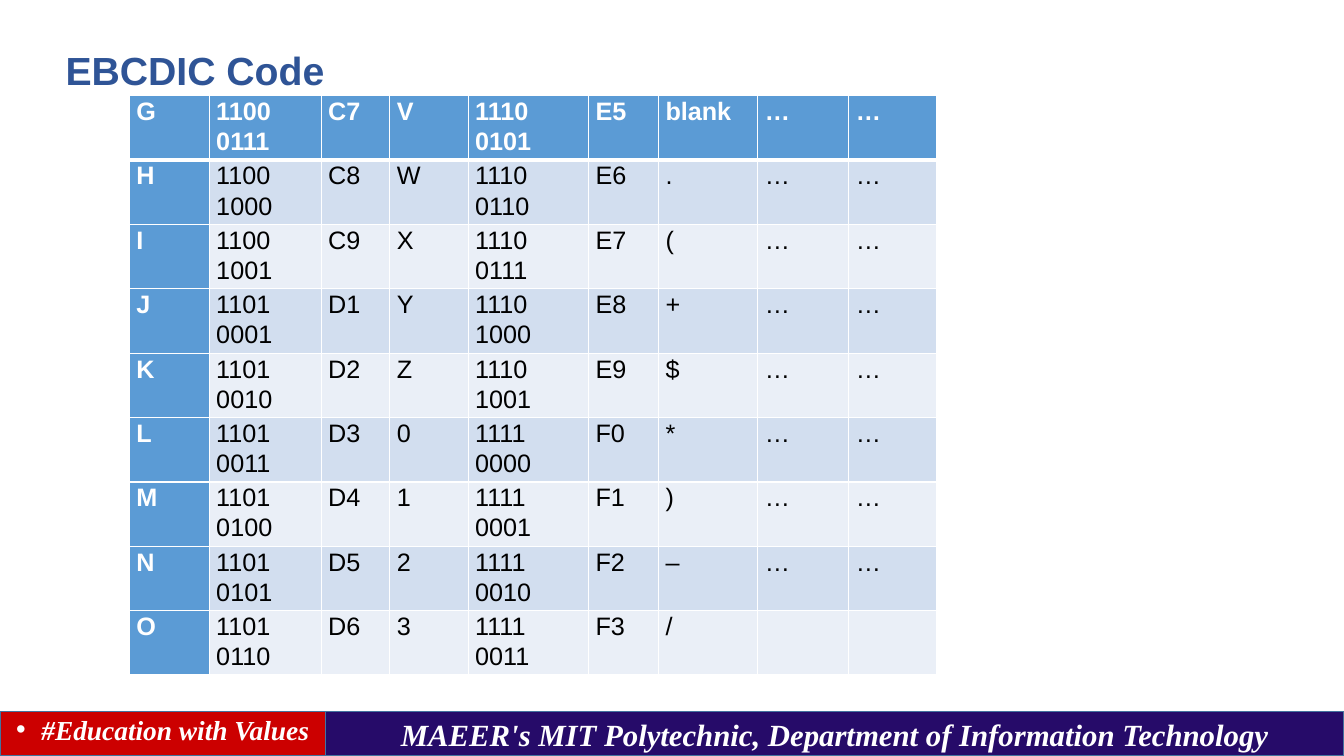
"""Builds the slide with the EBCDIC code table."""
from lxml import etree
from pptx import Presentation
from pptx import util as u
from pptx.dml.color import RGBColor
from pptx.enum import shapes, text
from pptx.oxml import ns

WHITE = RGBColor(0xFF, 0xFF, 0xFF)
BLACK = RGBColor(0x00, 0x00, 0x00)
NAVY = RGBColor(0x2F, 0x54, 0x96)
BLUE = RGBColor(0x5B, 0x9B, 0xD5)
DARK = RGBColor(0xD2, 0xDE, 0xEF)
LIGHT = RGBColor(0xEA, 0xEF, 0xF7)
RED = RGBColor(0xCC, 0x00, 0x00)
INDIGO = RGBColor(0x26, 0x0B, 0x69)
EDGE = RGBColor(0x43, 0x73, 0x9E)

WIDTHS = [57, 80, 49, 56, 86, 50, 71, 65, 63]
CODES = ["G C7 V E5 blank", "H C8 W E6 .", "I C9 X E7 (", "J D1 Y E8 +",
         "K D2 Z E9 $", "L D3 0 F0 *", "M D4 1 F1 )", "N D5 2 F2 –",
         "O D6 3 F3 /"]


def bits(code):
    return " ".join(f"{int(digit, 16):04b}" for digit in code)


def fields(line, rest):
    left, first, right, second, sign = line.split()
    return [left, bits(first), first, right, bits(second), second, sign, rest, rest]


class Deck:
    sans = "Arial"
    serif = "Times New Roman"

    def __init__(self):
        self.show = Presentation()
        self.show.slide_width = u.Pt(960)
        self.show.slide_height = u.Pt(540)
        self.slide = self.show.slides.add_slide(self.show.slide_layouts[5])

    def label(self, para, words, size, face, color, bold=True, slant=False):
        run = para.add_run()
        run.text = words
        font = run.font
        font.size, font.name = u.Pt(size), face
        font.bold, font.italic = bold, slant
        font.color.rgb = color

    def title(self, words, x, y, w, h):
        head = self.slide.shapes.title
        head.left, head.top, head.width, head.height = map(u.Pt, (x, y, w, h))
        frame = head.text_frame
        frame.word_wrap = True
        frame.auto_size = text.MSO_AUTO_SIZE.NONE
        frame.vertical_anchor = text.MSO_ANCHOR.TOP
        para = frame.paragraphs[0]
        para.alignment = text.PP_ALIGN.JUSTIFY
        para.line_spacing = 1.07
        self.label(para, words, 28, self.sans, NAVY)

    def bar(self, words, x, y, w, h, fill, size, bullet=False):
        box = self.slide.shapes.add_shape(
            shapes.MSO_SHAPE.RECTANGLE, *map(u.Pt, (x, y, w, h)))
        box.shadow.inherit = False
        box.fill.solid()
        box.fill.fore_color.rgb = fill
        box.line.color.rgb = EDGE
        box.line.width = u.Pt(1)
        frame = box.text_frame
        frame.word_wrap = True
        frame.vertical_anchor = text.MSO_ANCHOR.MIDDLE
        para = frame.paragraphs[0]
        para.alignment = text.PP_ALIGN.CENTER
        if bullet:
            para.line_spacing = 0.7
            props = para._p.get_or_add_pPr()
            props.set("marL", str(u.Pt(18)))
            props.set("indent", str(u.Pt(-18)))
            etree.SubElement(props, ns.qn("a:buFont"), typeface=self.sans)
            etree.SubElement(props, ns.qn("a:buChar"), char="•")
        self.label(para, words, size, self.serif, WHITE, slant=True)

    def border(self, cell, side, width):
        props = cell._tc.get_or_add_tcPr()
        line = etree.SubElement(props, ns.qn("a:ln" + side), w=str(u.Pt(width)))
        fill = etree.SubElement(line, ns.qn("a:solidFill"))
        etree.SubElement(fill, ns.qn("a:srgbClr"), val=str(WHITE))

    def cell(self, cell, words, row, col):
        for side in "LRTB":
            thick = (row, side) in ((0, "B"), (1, "T"))
            self.border(cell, side, 3 if thick else 1)
        head = row == 0 or col == 0
        cell.fill.solid()
        cell.fill.fore_color.rgb = BLUE if head else DARK if row % 2 else LIGHT
        cell.margin_left = cell.margin_right = u.Pt(5)
        cell.margin_top = cell.margin_bottom = 0
        para = cell.text_frame.paragraphs[0]
        para.line_spacing = 1.07
        if words:
            self.label(para, words, 18, self.sans, WHITE if head else BLACK, head)

    def table(self, rows, x, y, widths, pitch):
        frame = self.slide.shapes.add_table(
            len(rows), len(widths),
            *map(u.Pt, (x, y, sum(widths), pitch * len(rows))))
        grid = frame.table
        grid.first_col = True
        for col, width in enumerate(widths):
            grid.columns[col].width = u.Pt(width)
        for row, line in enumerate(rows):
            grid.rows[row].height = u.Pt(pitch)
            for col, words in enumerate(line):
                self.cell(grid.cell(row, col), words, row, col)


def main():
    deck = Deck()
    deck.bar("#Education with Values", 0, 508.4, 232.4, 31.6, RED, 19.6, bullet=True)
    deck.bar("MAEER's MIT Polytechnic, Department of Information Technology",
             232.4, 508.4, 727.6, 31.6, INDIGO, 22)
    deck.title("EBCDIC Code", 39.6, 27.4, 872.6, 41)
    rows = [fields(line, "…") for line in CODES[:-1]] + [fields(CODES[-1], "")]
    deck.table(rows, 92.5, 68.4, WIDTHS, 46)
    deck.show.save("out.pptx")


if __name__ == "__main__":
    main()
